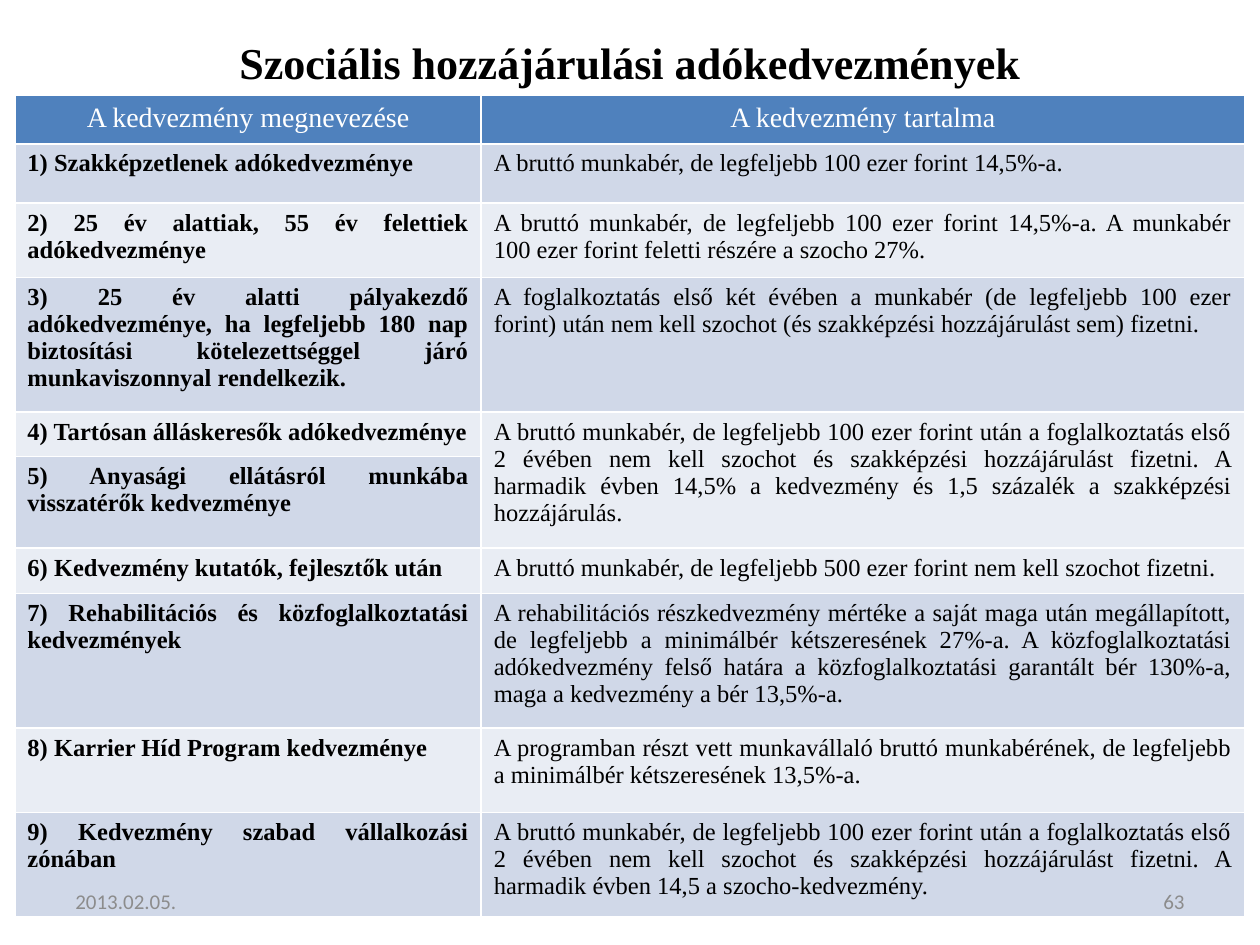
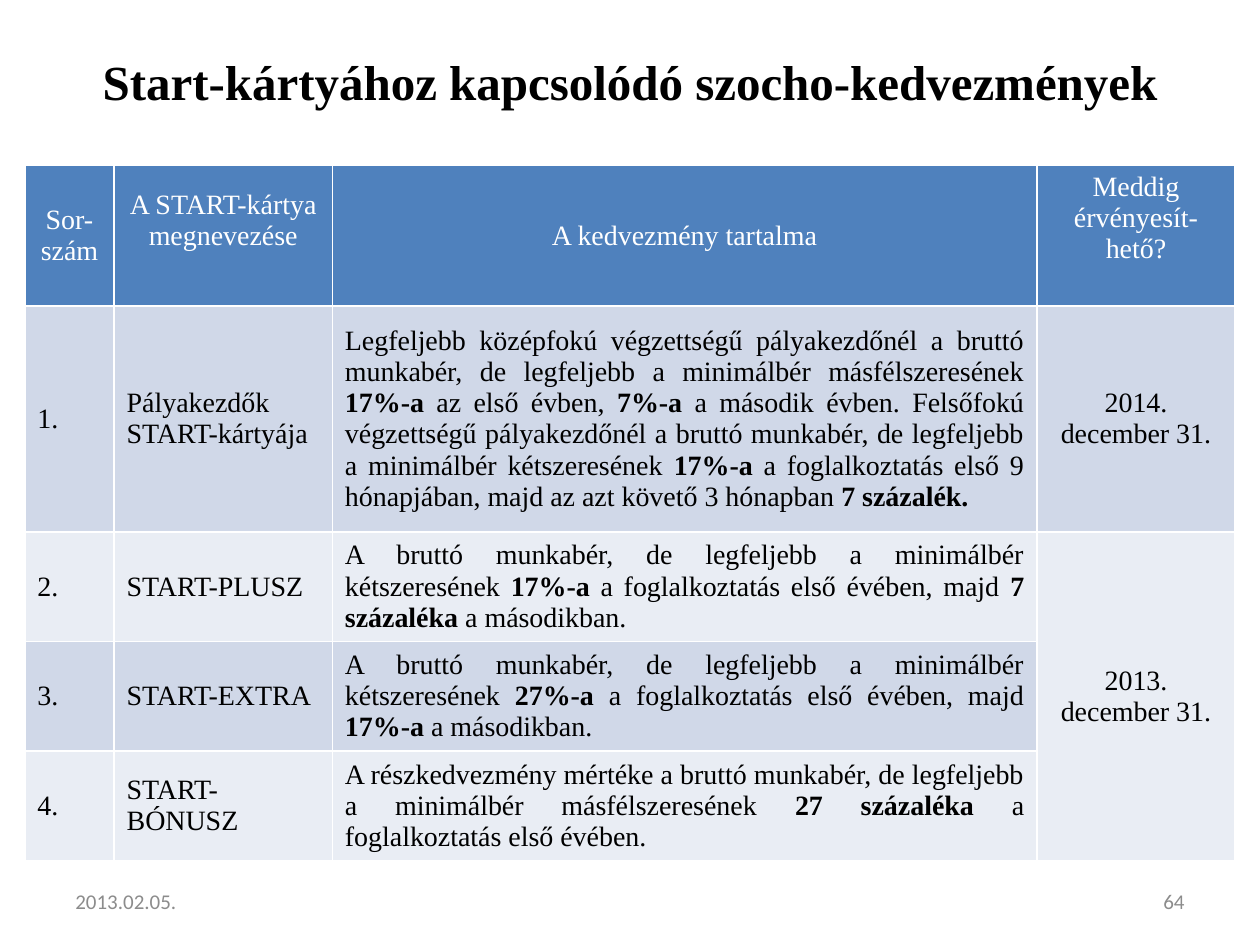
from dataclasses import dataclass
from pptx import Presentation
from pptx.dml.color import RGBColor
from pptx.enum.text import MSO_ANCHOR as Anchor, MSO_AUTO_SIZE as AutoSize, PP_ALIGN as Align
from pptx.util import Cm, Pt


@dataclass(frozen=True)
class Theme:
    black: RGBColor = RGBColor(0x00, 0x00, 0x00)
    white: RGBColor = RGBColor(0xFF, 0xFF, 0xFF)
    grey: RGBColor = RGBColor(0x8C, 0x8C, 0x8C)
    header: RGBColor = RGBColor(0x4F, 0x81, 0xBD)
    bands: tuple = (RGBColor(0xE9, 0xED, 0xF4), RGBColor(0xD0, 0xD8, 0xE8))
    serif: str = "Times New Roman"
    sans: str = "Calibri"
    header_size: float = 16
    footer_size: float = 12


class Deck:
    def __init__(self, theme):
        self.theme = theme
        self.presentation = Presentation()
        self.presentation.slide_width = Cm(25.4)
        self.presentation.slide_height = Cm(19.05)
        self.slide = None

    def fill_text(self, frame, text, name, size, color, align, bold=False):
        """Fill a text frame with one paragraph; **marked** parts are bold."""
        paragraph = frame.paragraphs[0]
        paragraph.alignment = align
        font = paragraph.font
        font.name, font.size, font.color.rgb = name, Pt(size), color
        for index, part in enumerate(text.split("**")):
            if part:
                run = paragraph.add_run()
                run.text = part
                run.font.bold = bold or index % 2 == 1

    def new_slide(self, title, size, height):
        layout = self.presentation.slide_layouts.get_by_name("Title Only")
        self.slide = self.presentation.slides.add_slide(layout)
        shape = self.slide.shapes.title
        shape.left, shape.top, shape.width, shape.height = Cm(1.27), Cm(0.76), Cm(22.86), Cm(height)
        shape.text_frame.auto_size = AutoSize.NONE
        shape.text_frame.vertical_anchor = Anchor.MIDDLE
        self.fill_text(shape.text_frame, title, self.theme.serif, size, self.theme.black,
                       Align.CENTER, bold=True)

    def table(self, left, top, widths, heights, rows, size, alignments, anchor, bold_first=False):
        """Draw a header and banded rows; None continues the cell above."""
        theme = self.theme
        table = self.slide.shapes.add_table(
            len(rows), len(widths), Cm(left), Cm(top), Cm(sum(widths)), Cm(sum(heights))).table
        for column, width in zip(table.columns, widths):
            column.width = Cm(width)
        for table_row, height in zip(table.rows, heights):
            table_row.height = Cm(height)

        for row, texts in enumerate(rows):
            for column, text in enumerate(texts):
                cell = table.cell(row, column)
                is_header = row == 0
                cell.fill.solid()
                cell.fill.fore_color.rgb = theme.header if is_header else theme.bands[row % 2]
                if text is None:
                    continue
                last = row
                while last + 1 < len(rows) and rows[last + 1][column] is None:
                    last += 1
                if last > row:
                    cell.merge(table.cell(last, column))
                cell.vertical_anchor = anchor
                self.fill_text(cell.text_frame, text, theme.serif,
                               theme.header_size if is_header else size,
                               theme.white if is_header else theme.black,
                               Align.CENTER if is_header else alignments[column],
                               bold=bold_first and column == 0 and not is_header)
        return table

    def footer(self, date, number):
        for left, text, align in ((1.27, date, Align.LEFT), (18.2, number, Align.RIGHT)):
            box = self.slide.shapes.add_textbox(Cm(left), Cm(17.66), Cm(5.93), Cm(1.01))
            box.text_frame.word_wrap = True
            box.text_frame.vertical_anchor = Anchor.MIDDLE
            self.fill_text(box.text_frame, text, self.theme.sans, self.theme.footer_size,
                           self.theme.grey, align)


DATE = "2013.02.05."

ALLOWANCES = [
    ("A kedvezmény megnevezése", "A kedvezmény tartalma"),
    ("1) Szakképzetlenek adókedvezménye",
     "A bruttó munkabér, de legfeljebb 100 ezer forint 14,5%-a."),
    ("2) 25 év alattiak, 55 év felettiek adókedvezménye",
     "A bruttó munkabér, de legfeljebb 100 ezer forint 14,5%-a. A munkabér 100 ezer forint "
     "feletti részére a szocho 27%."),
    ("3) 25 év alatti pályakezdő adókedvezménye, ha legfeljebb 180 nap biztosítási "
     "kötelezettséggel járó munkaviszonnyal rendelkezik.",
     "A foglalkoztatás első két évében a munkabér (de legfeljebb 100 ezer forint) után nem "
     "kell szochot (és szakképzési hozzájárulást sem) fizetni."),
    ("4) Tartósan álláskeresők adókedvezménye",
     "A bruttó munkabér, de legfeljebb 100 ezer forint után a foglalkoztatás első 2 évében nem "
     "kell szochot és szakképzési hozzájárulást fizetni. A harmadik évben 14,5% a kedvezmény "
     "és 1,5 százalék a szakképzési hozzájárulás."),
    ("5) Anyasági ellátásról munkába visszatérők kedvezménye", None),
    ("6) Kedvezmény kutatók, fejlesztők után",
     "A bruttó munkabér, de legfeljebb 500 ezer forint nem kell szochot fizetni."),
    ("7) Rehabilitációs és közfoglalkoztatási kedvezmények",
     "A rehabilitációs részkedvezmény mértéke a saját maga után megállapított, de legfeljebb a "
     "minimálbér kétszeresének 27%-a. A közfoglalkoztatási adókedvezmény felső határa a "
     "közfoglalkoztatási garantált bér 130%-a, maga a kedvezmény a bér 13,5%-a."),
    ("8) Karrier Híd Program kedvezménye",
     "A programban részt vett munkavállaló bruttó munkabérének, de legfeljebb a minimálbér "
     "kétszeresének 13,5%-a."),
    ("9) Kedvezmény szabad vállalkozási zónában",
     "A bruttó munkabér, de legfeljebb 100 ezer forint után a foglalkoztatás első 2 évében nem "
     "kell szochot és szakképzési hozzájárulást fizetni. A harmadik évben 14,5 a "
     "szocho-kedvezmény."),
]

START_CARDS = [
    ("Sor-szám", "A START-kártya megnevezése", "A kedvezmény tartalma", "Meddig érvényesít-hető?"),
    ("1.", "Pályakezdők START-kártyája",
     "Legfeljebb középfokú végzettségű pályakezdőnél a bruttó munkabér, de legfeljebb a "
     "minimálbér másfélszeresének **17%-a **az első évben, **7%-a **a második évben. Felsőfokú "
     "végzettségű pályakezdőnél a bruttó munkabér, de legfeljebb a minimálbér kétszeresének "
     "**17%-a **a foglalkoztatás első 9 hónapjában, majd az azt követő 3 hónapban "
     "**7 százalék.**",
     "2014. december 31."),
    ("2.", "START-PLUSZ",
     "A bruttó munkabér, de legfeljebb a minimálbér kétszeresének **17%-a **a foglalkoztatás "
     "első évében, majd **7 százaléka **a másodikban.",
     "2013. december 31."),
    ("3.", "START-EXTRA",
     "A bruttó munkabér, de legfeljebb a minimálbér kétszeresének **27%-a **a foglalkoztatás "
     "első évében, majd **17%-a **a másodikban.", None),
    ("4.", "START-BÓNUSZ",
     "A részkedvezmény mértéke a bruttó munkabér, de legfeljebb a minimálbér másfélszeresének "
     "**27 százaléka **a foglalkoztatás első évében.", None),
]


def main():
    deck = Deck(Theme())

    # Social contribution tax allowances
    deck.new_slide("Szociális hozzájárulási adókedvezmények", size=25.2, height=0.97)
    deck.table(0.3, 1.93, (9.4, 15.39),
               (0.97, 1.19, 1.5, 2.72, 0.89, 1.85, 0.91, 2.72, 1.7, 2.1),
               ALLOWANCES, 14, [Align.JUSTIFY] * 2, Anchor.TOP, bold_first=True)
    deck.footer(DATE, "63")

    # Allowances tied to the Start card
    deck.new_slide("Start-kártyához kapcsolódó szocho-kedvezmények", size=28, height=1.75)
    cards = deck.table(0.5, 3.33, (1.8, 4.4, 14.2, 4), (2.84, 4.55, 2.21, 2.21, 2.21),
                       START_CARDS, 16, [Align.JUSTIFY] * 3 + [Align.CENTER], Anchor.MIDDLE)
    cards.cell(0, 1).margin_bottom = Cm(0.75)
    cards.cell(0, 3).vertical_anchor = Anchor.TOP
    deck.footer(DATE, "64")

    deck.presentation.save("out.pptx")


if __name__ == "__main__":
    main()
